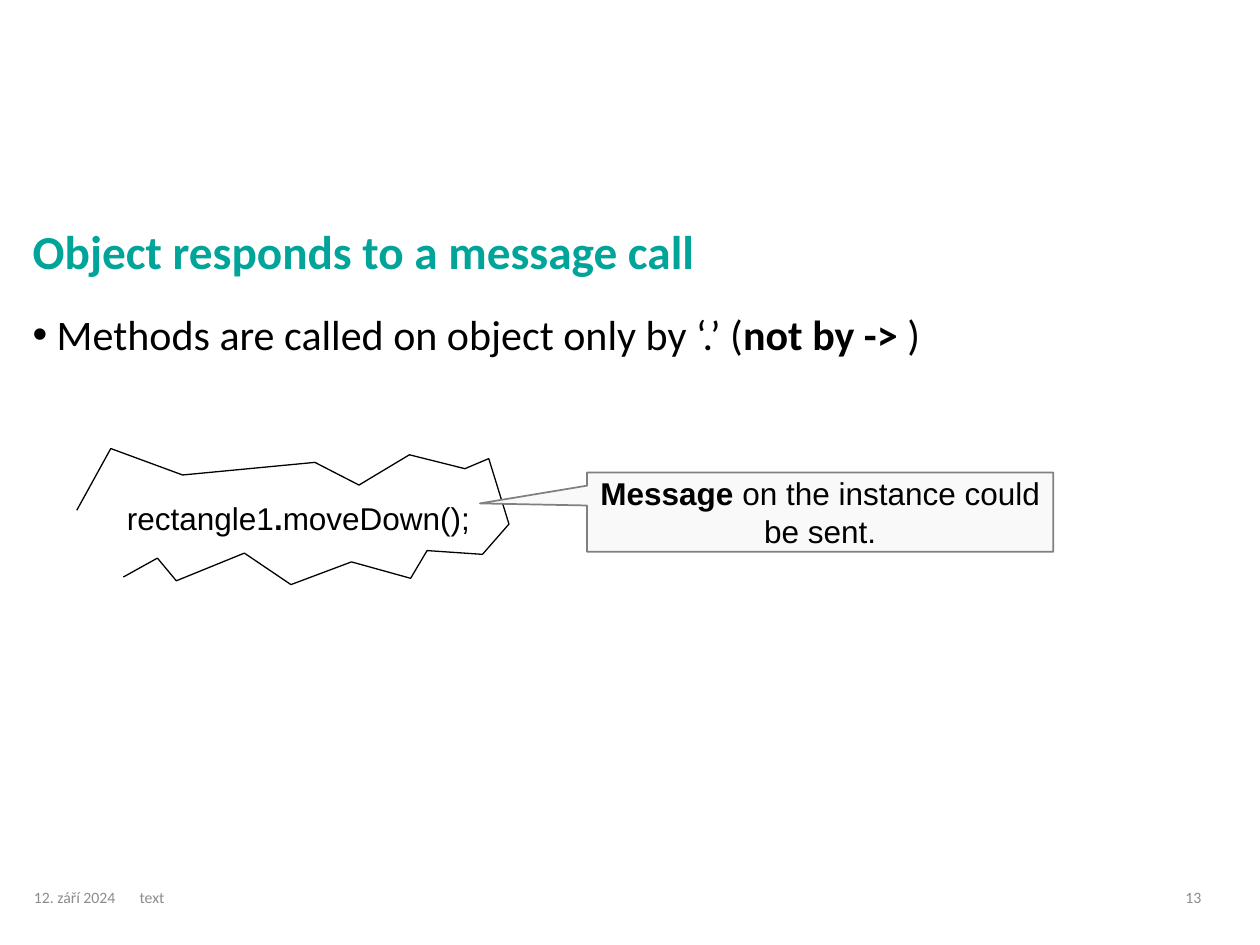
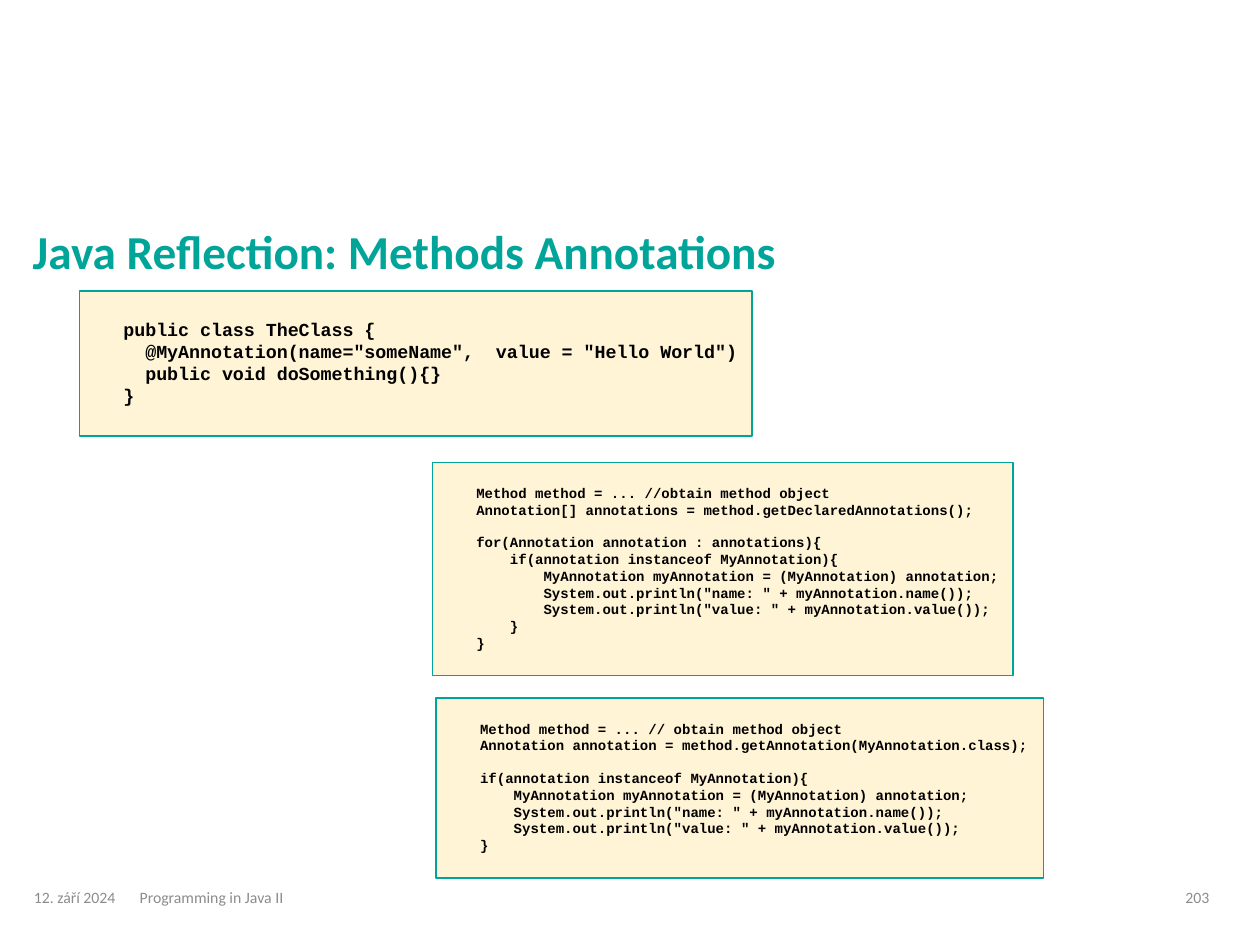
from lxml import etree
from pptx import Presentation
from pptx.dml.color import RGBColor
from pptx.enum.shapes import MSO_SHAPE
from pptx.enum.text import MSO_ANCHOR, MSO_AUTO_SIZE, PP_ALIGN
from pptx.oxml.ns import qn
from pptx.util import Emu, Inches, Pt

# Shared style
TEAL = RGBColor(0x00, 0xA4, 0x99)
BLACK = RGBColor(0x00, 0x00, 0x00)
GREY = RGBColor(0x80, 0x80, 0x80)
FOOTER_GREY = RGBColor(0x8C, 0x8C, 0x8C)
PALE_GREY = RGBColor(0xF9, 0xF9, 0xF9)
CREAM = RGBColor(0xFF, 0xF2, 0xCC)
HEAD_FONT, LABEL_FONT, CODE_FONT = "Calibri", "Arial", "Courier New"

RECT, CALLOUT = MSO_SHAPE.RECTANGLE, MSO_SHAPE.RECTANGULAR_CALLOUT
TOP, MIDDLE, BOTTOM = MSO_ANCHOR.TOP, MSO_ANCHOR.MIDDLE, MSO_ANCHOR.BOTTOM
LEFT, CENTER = PP_ALIGN.LEFT, PP_ALIGN.CENTER
NO_FIT = MSO_AUTO_SIZE.NONE

# Grid of 100 columns by 75 rows
CELL = Inches(0.1)
LAYOUT_BODY, LAYOUT_TITLE = 1, 5
CODE_LINE = 1.13  # line height of the code font, in ems
DATE = "12. září 2024"

# Slide content
TORN_EDGE = [
    (6.1, 40.5), (8.8, 35.6), (14.5, 37.7), (25, 36.7), (28.5, 38.5),
    (32.5, 36.1), (36.9, 37.2), (38.8, 36.4), (40.4, 41.6), (38.3, 44),
    (33.9, 43.7), (32.6, 45.9), (27.9, 44.6), (23.1, 46.4), (19.4, 43.9),
    (14, 46.1), (12.5, 44.3), (9.8, 45.8)]

LOOP_CODE = """\
Method method = ... //obtain method object
Annotation[] annotations = method.getDeclaredAnnotations();

for(Annotation annotation : annotations){
    if(annotation instanceof MyAnnotation){
        MyAnnotation myAnnotation = (MyAnnotation) annotation;
        System.out.println("name: " + myAnnotation.name());
        System.out.println("value: " + myAnnotation.value());
    }
}"""

SINGLE_CODE = """\
Method method = ... // obtain method object
Annotation annotation = method.getAnnotation(MyAnnotation.class);

if(annotation instanceof MyAnnotation){
    MyAnnotation myAnnotation = (MyAnnotation) annotation;
    System.out.println("name: " + myAnnotation.name());
    System.out.println("value: " + myAnnotation.value());
}"""

CLASS_CODE = """\
public class TheClass {
  @MyAnnotation(name="someName",  value = "Hello World")
  public void doSomething(){}
}"""


def cells(*counts):
    return [Emu(round(n * CELL)) for n in counts]


def add_element(parent, tag, **attrs):
    el = etree.SubElement(parent, qn(tag))
    for name, value in attrs.items():
        el.set(name, str(value))
    return el


class Deck:
    def __init__(self):
        self.prs = Presentation()
        self.prs.slide_width, self.prs.slide_height = cells(100, 75)
        self.s = None

    def slide(self, title, footer, number, layout=LAYOUT_TITLE):
        self.s = self.prs.slides.add_slide(self.prs.slide_layouts[layout])
        tf = self.placeholder(self.s.shapes.title, (1.6, 11.5, 96.8, 11.2), BOTTOM)
        self.fill_text(tf.paragraphs[0], [(title, None)], 27, color=TEAL, bold=True, spacing=0.9)
        for text, col, width in ((footer, 10.1, 81.5), (number, 93.1, 5), (DATE, 1.7, 8.5)):
            self.text([(text, None)], (col, 69.5, width, 3.4), 9, HEAD_FONT, FOOTER_GREY, MIDDLE)

    def placeholder(self, sp, box, anchor):
        sp.left, sp.top, sp.width, sp.height = cells(*box)
        tf = sp.text_frame
        tf.auto_size, tf.vertical_anchor = NO_FIT, anchor
        return tf

    def fill_text(self, p, runs, size, font=HEAD_FONT, color=BLACK, bold=False,
                  align=LEFT, spacing=None):
        """Fill a paragraph; each run is (text, bold or None)."""
        p.alignment, p.line_spacing = align, spacing
        f = p.font
        f.name, f.size, f.bold, f.color.rgb = font, Pt(size), bold, color
        for text, run_bold in runs:
            r = p.add_run()
            r.text, r.font.bold = text, run_bold

    def bullet(self, runs, box):
        p = self.placeholder(self.s.placeholders[1], box, TOP).paragraphs[0]
        p.space_before = Pt(0)
        pPr = p._p.get_or_add_pPr()
        pPr.set("marL", str(Inches(0.19)))
        pPr.set("indent", str(-Inches(0.19)))
        add_element(pPr, "a:buFont", typeface="Arial")
        add_element(pPr, "a:buChar", char="•")
        self.fill_text(p, runs, 24, spacing=0.9)

    def text(self, runs, box, size, font, color=BLACK, anchor=TOP, shadow=False):
        tf = self.s.shapes.add_textbox(*cells(*box)).text_frame
        tf.word_wrap, tf.vertical_anchor = True, anchor
        p = tf.paragraphs[0]
        self.fill_text(p, runs, size, font, color)
        for r in p.runs if shadow else ():
            effects = add_element(r._r.get_or_add_rPr(), "a:effectLst")
            outer = add_element(effects, "a:outerShdw", blurRad=38100, dist=38100, dir=2700000)
            add_element(outer, "a:srgbClr", val="C0C0C0")

    def shape(self, kind, box, fill, line, width):
        sp = self.s.shapes.add_shape(kind, *cells(*box))
        sp.fill.solid()
        sp.fill.fore_color.rgb = fill
        self.outline(sp, line, width)
        sp.text_frame.word_wrap = True
        return sp

    def outline(self, sp, color, width):
        sp.shadow.inherit = False
        sp.line.color.rgb, sp.line.width = color, Pt(width)

    def callout(self, runs, box, tip):
        sp = self.shape(CALLOUT, box, PALE_GREY, GREY, 1)
        sp.adjustments[0], sp.adjustments[1] = tip
        sp.text_frame.vertical_anchor = MIDDLE
        self.fill_text(sp.text_frame.paragraphs[0], runs, 18, LABEL_FONT, align=CENTER)

    def open_outline(self, points):
        start, *rest = [cells(*pt) for pt in points]
        builder = self.s.shapes.build_freeform(*start)
        builder.add_line_segments(rest, close=False)
        sp = builder.convert_to_shape()
        sp.fill.background()
        self.outline(sp, BLACK, 0.75)

    def code(self, listing, box, size):
        sp = self.shape(RECT, box, CREAM, TEAL, 0)
        color = sp._element.spPr.find(qn("a:solidFill")).find(qn("a:srgbClr"))
        add_element(color, "a:alpha", val=79000)
        tf = sp.text_frame
        gap = Pt(size * CODE_LINE)
        tf.vertical_anchor = TOP
        tf.margin_left, tf.margin_right = Inches(0.35), 0
        tf.margin_top = Inches(0.05) + gap
        p, blank = tf.paragraphs[0], False
        for i, line in enumerate(listing.split("\n")):
            if not line:
                blank = True
                continue
            if i:
                p = tf.add_paragraph()
            if blank:
                p.space_before, blank = gap, False
            self.fill_text(p, [(line, None)], size, CODE_FONT, bold=True)


def main():
    deck = Deck()

    # Message call
    deck.slide("Object responds to a message call", "text", "13", LAYOUT_BODY)
    deck.bullet([("Methods are called on object only by ‘.’ (", None),
                 ("not by -> ", True), (")", None)], (1.6, 24.4, 96.8, 43.5))
    deck.text([("rectangle1", None), (".", True), ("moveDown();", None)],
              (9.1, 39.1, 31, 4), 18, LABEL_FONT, shadow=True)
    deck.open_outline(TORN_EDGE)
    deck.callout([("Message", True), (" on the instance could be sent.", None)],
                 (46.6, 37.5, 37, 6.3), (-0.73, -0.11))

    # Method annotations
    deck.slide("Java Reflection: Methods Annotations", "Programming in Java II", "203")
    deck.code(LOOP_CODE, (34.3, 36.7, 46.1, 16.9), 8)
    deck.code(SINGLE_CODE, (34.6, 55.4, 48.2, 14.3), 8)
    deck.code(CLASS_CODE, (6.3, 23.1, 53.4, 11.5), 10.5)

    deck.prs.save("out.pptx")


if __name__ == "__main__":
    main()
